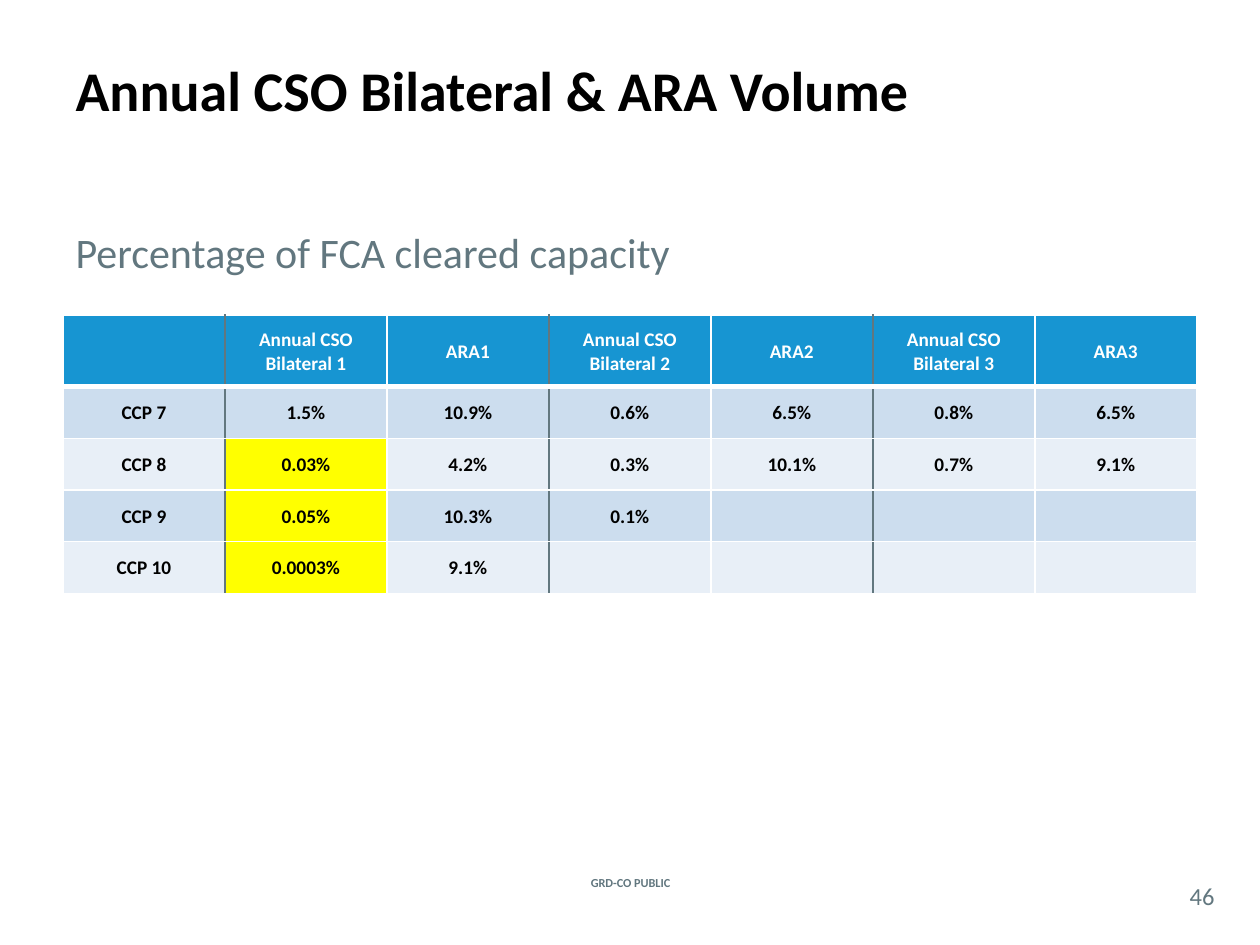
from lxml import etree
from pptx import Presentation
from pptx.dml.color import RGBColor
from pptx.enum import text as t
from pptx.oxml.ns import qn
from pptx.util import Inches, Pt

# Content
TITLE = "Annual CSO Bilateral & ARA Volume"
SUBTITLE = "Percentage of FCA cleared capacity"
FOOTER = "GRD-CO PUBLIC"
PAGE_NUMBER = "46"
TABLE = [
    ["", "Annual CSO Bilateral 1", "ARA1", "Annual CSO Bilateral 2", "ARA2",
     "Annual CSO Bilateral 3", "ARA3"],
    ["CCP 7", "1.5%", "10.9%", "0.6%", "6.5%", "0.8%", "6.5%"],
    ["CCP 8", "0.03%", "4.2%", "0.3%", "10.1%", "0.7%", "9.1%"],
    ["CCP 9", "0.05%", "10.3%", "0.1%", "", "", ""],
    ["CCP 10", "0.0003%", "9.1%", "", "", "", ""],
]
HIGHLIGHTED = {(2, 1), (3, 1), (4, 1)}

# Style
FONT = "Calibri"
BLACK, WHITE, GREY = "000000", "FFFFFF", "62777F"
HEADER_BLUE, BAND_DARK, BAND_LIGHT, YELLOW = "1795D2", "CCDDEE", "E8EFF7", "FFFF00"
LEFT, WIDTH = 0.5, 9
HEADER_HEIGHT, ROW_HEIGHT = 0.57, 0.41


def color(hex_string):
    return RGBColor.from_string(hex_string)


def write(frame, text, size, ink, bold=False, align=t.PP_ALIGN.CENTER,
          anchor=t.MSO_ANCHOR.MIDDLE):
    frame.word_wrap = True
    frame.vertical_anchor = anchor
    paragraph = frame.paragraphs[0]
    paragraph.alignment = align
    paragraph.space_before = Pt(0)
    if text:
        run = paragraph.add_run()
        run.text = text
        run.font.name, run.font.size, run.font.bold = FONT, Pt(size), bold
        run.font.color.rgb = color(ink)
    return paragraph


def place(shape, left, top, width, height):
    shape.left, shape.top = Inches(left), Inches(top)
    shape.width, shape.height = Inches(width), Inches(height)


def add_border(cell, side, ink, width):
    line = etree.SubElement(cell._tc.get_or_add_tcPr(), qn(f"a:ln{side}"), w=str(Pt(width)))
    fill = etree.SubElement(line, qn("a:solidFill"))
    etree.SubElement(fill, qn("a:srgbClr"), val=ink)


def add_label(slide, text, box, size, bold=False, inset=0.0):
    label = slide.shapes.add_textbox(*map(Inches, box))
    frame = label.text_frame
    frame.margin_left = frame.margin_right = Inches(inset)
    frame.margin_top = frame.margin_bottom = Inches(inset)
    write(frame, text, size, GREY, bold)


def add_volume_table(slide):
    rows, columns = len(TABLE), len(TABLE[0])
    height = HEADER_HEIGHT + (rows - 1) * ROW_HEIGHT
    table = slide.shapes.add_table(
        rows, columns, Inches(LEFT), Inches(2.5), Inches(WIDTH), Inches(height)).table
    for column in table.columns:
        column.width = Inches(WIDTH / columns)
    for r, values in enumerate(TABLE):
        header = r == 0
        table.rows[r].height = Inches(HEADER_HEIGHT if header else ROW_HEIGHT)
        band = HEADER_BLUE if header else BAND_DARK if r % 2 else BAND_LIGHT
        for c, value in enumerate(values):
            cell = table.cell(r, c)
            cell.margin_left = cell.margin_right = cell.margin_top = Inches(0.01)
            cell.margin_bottom = 0
            # A grey rule precedes each bilateral column
            add_border(cell, "L", GREY if c % 2 else WHITE, 1)
            add_border(cell, "R", GREY if c % 2 == 0 and c < columns - 1 else WHITE, 1)
            add_border(cell, "T", WHITE, 3 if r == 1 else 1)
            add_border(cell, "B", WHITE, 3 if header else 1)
            cell.fill.solid()
            cell.fill.fore_color.rgb = color(YELLOW if (r, c) in HIGHLIGHTED else band)
            write(cell.text_frame, value, 11, WHITE if header else BLACK, bold=True)
            cell.vertical_anchor = t.MSO_ANCHOR.MIDDLE


def main():
    presentation = Presentation()
    presentation.slide_width, presentation.slide_height = Inches(10), Inches(7.5)
    slide = presentation.slides.add_slide(presentation.slide_layouts[1])

    # Title and subtitle
    title, body = slide.shapes.title, slide.placeholders[1]
    place(title, LEFT, 0.08, WIDTH, 1.25)
    write(title.text_frame, TITLE, 32, BLACK, bold=True, align=t.PP_ALIGN.LEFT)
    place(body, LEFT, 1.75, WIDTH, 4.83)
    paragraph = write(body.text_frame, SUBTITLE, 24, GREY, align=t.PP_ALIGN.LEFT,
                      anchor=t.MSO_ANCHOR.TOP)
    properties = paragraph._p.get_or_add_pPr()
    properties.set("marL", "0")
    properties.set("indent", "0")
    etree.SubElement(properties, qn("a:buNone"))

    add_volume_table(slide)

    # Footer and page number
    add_label(slide, FOOTER, (4.27, 6.92, 1.47, 0.17), 7, bold=True, inset=0.03)
    add_label(slide, PAGE_NUMBER, (9.33, 6.96, 0.42, 0.29), 14)

    presentation.save("out.pptx")


if __name__ == "__main__":
    main()
